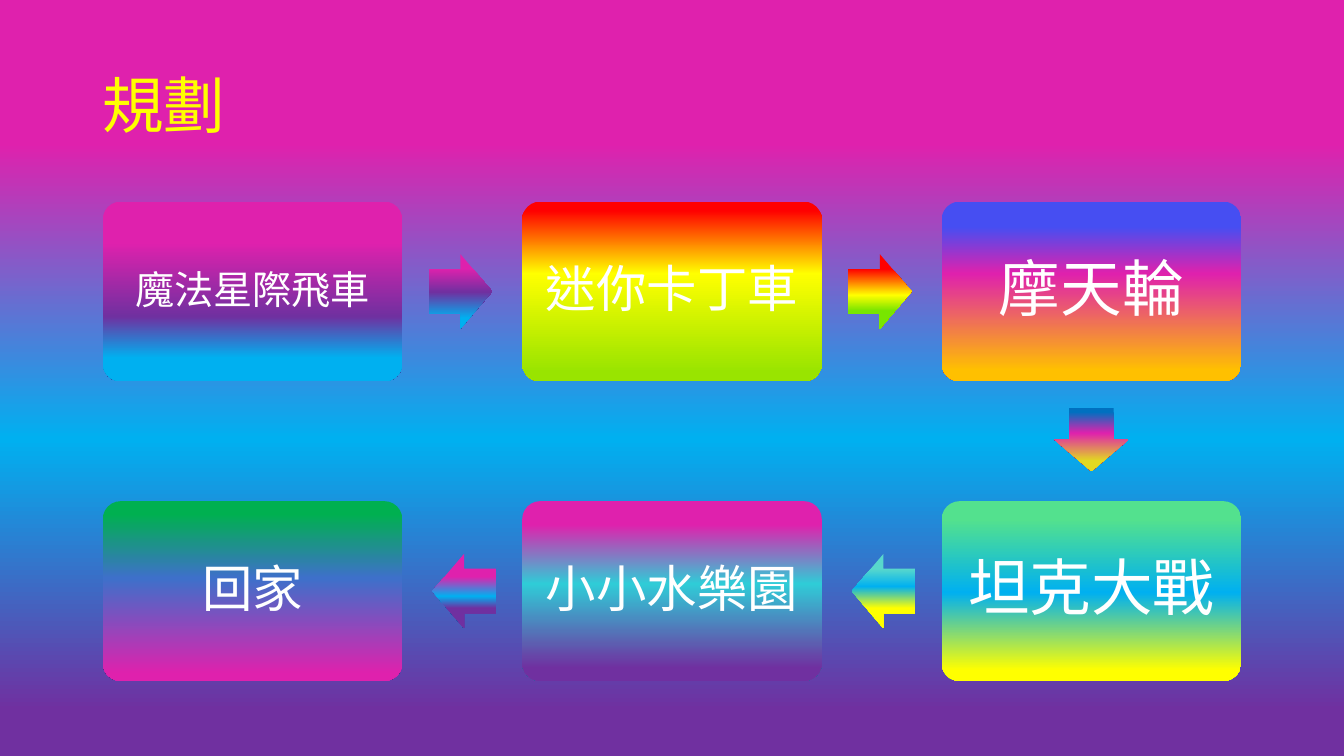
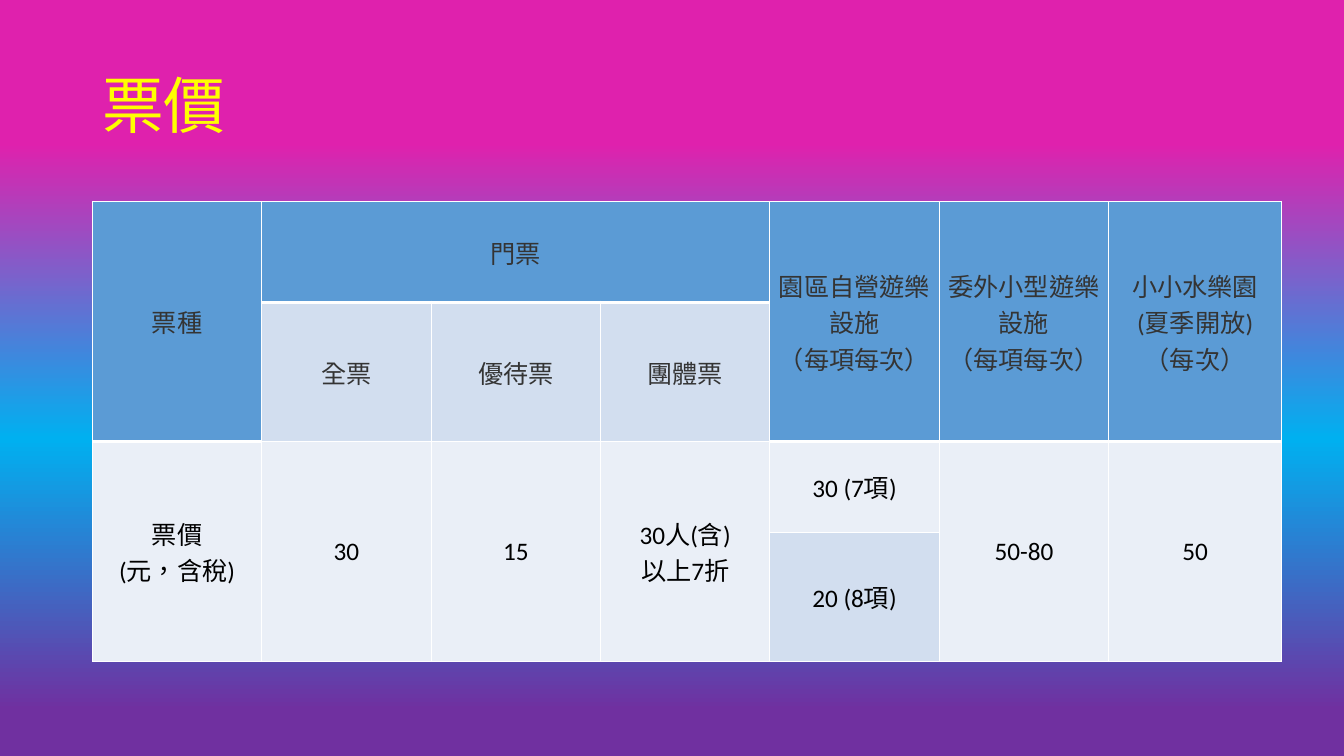
import copy

import pptx
import pptx.dml.color
import pptx.enum.lang
import pptx.enum.shapes
import pptx.enum.text
import pptx.oxml
import pptx.oxml.ns
import pptx.util

Pt = pptx.util.Pt
SHAPE = pptx.enum.shapes.MSO_SHAPE
ALIGN = pptx.enum.text.PP_ALIGN
MIDDLE = pptx.enum.text.MSO_ANCHOR.MIDDLE

CARD_W, CARD_H = 214, 128.4
CARD_LEFT, CARD_TOP = 73.4, 144
STEP_X, STEP_Y = 299.6, 214
ARROW_LENGTH, ARROW_BREADTH, ARROW_GAP = 45.4, 53.2, 18.8
ARROWS = {
    (1, 0): SHAPE.RIGHT_ARROW,
    (-1, 0): SHAPE.LEFT_ARROW,
    (0, 1): SHAPE.DOWN_ARROW,
}

RIDES = [
    ("魔法星際飛車", 28, (0, 0), [(23, "DF21AD"), (64, "7030A0"), (87, "00B0F0")]),
    ("迷你卡丁車", 36, (1, 0), [(5, "FF0000"), (40, "FFFF00"), (95, "99E400")]),
    ("摩天輪", 44, (2, 0), [(14, "464EF2"), (40, "DF21AD"), (94, "FFC000")]),
    ("坦克大戰", 44, (2, 1), [(10, "53E18E"), (51, "00B0F0"), (94, "FFFF00")]),
    ("小小水樂園", 36, (1, 1), [(13, "DF21AD"), (46, "2FCCD7"), (93, "7030A0")]),
    ("回家", 36, (0, 1), [(7, "00B050"), (43, "3E70CA"), (96, "DF21AD")]),
]
ARROW_STOPS = [
    [(19, "DF21AD"), (51, "7030A0"), (86, "00B0F0")],
    [(20, "FF0000"), (55, "FFFF00"), (76, "78E500")],
    [(7, "0070C0"), (40, "DF21AD"), (84, "E2D920")],
    [(20, "58D8CC"), (44, "00B0F0"), (73, "FFFF00")],
    [(31, "DF21AD"), (57, "00B0F0"), (73, "7030A0")],
]

COLUMN_WIDTHS = [121] * 6 + [123.6]
ROW_HEIGHTS = [72, 99.4, 64.8, 92.2]
PRICES = [
    (0, 0, 2, 1, "票種"),
    (0, 1, 1, 3, "門票"),
    (0, 4, 2, 1, "園區自營遊樂設施\n（每項每次）"),
    (0, 5, 2, 1, "委外小型遊樂設施\n（每項每次）"),
    (0, 6, 2, 1, "小小水樂園\n(夏季開放)\n（每次）"),
    (1, 1, 1, 1, "全票"),
    (1, 2, 1, 1, "優待票"),
    (1, 3, 1, 1, "團體票"),
    (2, 0, 2, 1, "票價\n(元，含稅)"),
    (2, 1, 2, 1, "30"),
    (2, 2, 2, 1, "15"),
    (2, 3, 2, 1, "30人(含)\n以上7折"),
    (2, 4, 1, 1, "30 (7項)"),
    (2, 5, 2, 1, "50-80"),
    (2, 6, 2, 1, "50"),
    (3, 4, 1, 1, "20 (8項)"),
]


def rgb(value):
    return pptx.dml.color.RGBColor.from_string(value)


class Deck:
    title_font = "Noto Sans CJK JP"
    body_font = "Calibri"
    title_color = "FFFF00"
    white = "FFFFFF"
    background = [(19, "DF21AD"), (58, "00B0F0"), (94, "7030A0")]
    row_fills = ["5B9BD5", "D2DEEF", "EAEFF7", "D2DEEF"]
    row_inks = ["343434", "343434", "000000", "000000"]

    def __init__(self):
        self.prs = pptx.Presentation()
        self.prs.slide_width, self.prs.slide_height = Pt(960), Pt(540)
        self.s = None

    def slide(self, title):
        self.s = self.prs.slides.add_slide(self.prs.slide_layouts[6])
        self.gradient(self.s.background.fill, self.s._element, self.background)
        tf = self.s.shapes.add_textbox(Pt(66), Pt(25), Pt(828), Pt(104.4)).text_frame
        tf.word_wrap = True
        tf.vertical_anchor = MIDDLE
        tf.paragraphs[0].line_spacing = 0.9
        self.text(tf, title, 44, self.title_color, ALIGN.LEFT, self.title_font)

    def gradient(self, fill, element, stops):
        fill.gradient()
        fill.gradient_angle = 270
        gs_list = element.xpath(".//a:gsLst")[0]
        while len(gs_list) < len(stops):
            gs_list.append(copy.deepcopy(gs_list[0]))
        for stop, (percent, color) in zip(fill.gradient_stops, stops):
            stop.color.rgb = rgb(color)
            stop.position = percent / 100

    def text(self, tf, text, size, color, align=ALIGN.CENTER, font=None):
        p = tf.paragraphs[0]
        p.text = text
        p.alignment = align
        for r in p.runs:
            r.font.name = font or self.body_font
            r.font.size = Pt(size)
            r.font.color.rgb = rgb(color)
            r.font.language_id = pptx.enum.lang.MSO_LANGUAGE_ID.TRADITIONAL_CHINESE
            if font:
                ea = copy.deepcopy(r._r.rPr.find(pptx.oxml.ns.qn("a:latin")))
                ea.tag = pptx.oxml.ns.qn("a:ea")
                r._r.rPr.append(ea)

    def shape(self, kind, x, y, w, h, adjustments, stops):
        sp = self.s.shapes.add_shape(kind, Pt(x), Pt(y), Pt(w), Pt(h))
        sp.shadow.inherit = False
        sp.line.fill.background()
        for i, value in enumerate(adjustments):
            sp.adjustments[i] = value
        self.gradient(sp.fill, sp._element, stops)
        return sp

    def card(self, label, size, cell, stops):
        x, y = CARD_LEFT + cell[0] * STEP_X, CARD_TOP + cell[1] * STEP_Y
        sp = self.shape(SHAPE.ROUNDED_RECTANGLE, x, y, CARD_W, CARD_H, [0.1], stops)
        tf = sp.text_frame
        tf.word_wrap = True
        tf.vertical_anchor = MIDDLE
        tf.margin_left = tf.margin_right = Pt(0.3 * size)
        tf.margin_top = tf.margin_bottom = Pt(0.3 * size)
        tf.paragraphs[0].line_spacing = 0.9
        self.text(tf, label, size, self.white)

    def arrow(self, start, end, stops):
        dx, dy = end[0] - start[0], end[1] - start[1]
        reach = ARROW_GAP + ARROW_LENGTH / 2
        cx = CARD_LEFT + start[0] * STEP_X + CARD_W / 2 + dx * (CARD_W / 2 + reach)
        cy = CARD_TOP + start[1] * STEP_Y + CARD_H / 2 + dy * (CARD_H / 2 + reach)
        w, h = (ARROW_LENGTH, ARROW_BREADTH) if dx else (ARROW_BREADTH, ARROW_LENGTH)
        self.shape(ARROWS[dx, dy], cx - w / 2, cy - h / 2, w, h, [0.6, 0.5], stops)

    def border(self, cell, side, width):
        ns = pptx.oxml.ns.nsdecls("a")
        cell._tc.get_or_add_tcPr().append(pptx.oxml.parse_xml(
            f'<a:ln{side} {ns} w="{Pt(width)}"><a:solidFill>'
            f'<a:srgbClr val="{self.white}"/></a:solidFill></a:ln{side}>'))

    def table(self, x, y, widths, heights, entries):
        table = self.s.shapes.add_table(
            len(heights), len(widths), Pt(x), Pt(y),
            Pt(sum(widths)), Pt(sum(heights))).table
        table.first_row = table.horz_banding = False
        for column, width in zip(table.columns, widths):
            column.width = Pt(width)
        for row, height in zip(table.rows, heights):
            row.height = Pt(height)
        owner = {(r, c): row
                 for row, col, rows, cols, _ in entries
                 for r in range(row, row + rows)
                 for c in range(col, col + cols)}
        for (r, c), row in owner.items():
            cell = table.cell(r, c)
            self.border(cell, "L", 1)
            self.border(cell, "R", 1)
            self.border(cell, "T", 3 if owner.get((r - 1, c)) == 0 else 1)
            self.border(cell, "B", 3 if row == 0 else 1)
            cell.fill.solid()
            cell.fill.fore_color.rgb = rgb(self.row_fills[row])
        for row, col, rows, cols, text in entries:
            cell = table.cell(row, col)
            if rows * cols > 1:
                cell.merge(table.cell(row + rows - 1, col + cols - 1))
            cell.vertical_anchor = MIDDLE
            cell.margin_left = cell.margin_right = Pt(2)
            cell.margin_top = cell.margin_bottom = Pt(2)
            self.text(cell.text_frame, text, 18, self.row_inks[row])


def main():
    deck = Deck()
    deck.slide("規劃")
    for ride in RIDES:
        deck.card(*ride)
    for ride, following, stops in zip(RIDES, RIDES[1:], ARROW_STOPS):
        deck.arrow(ride[2], following[2], stops)
    deck.slide("票價")
    deck.table(66, 144, COLUMN_WIDTHS, ROW_HEIGHTS, PRICES)
    deck.prs.save("out.pptx")


if __name__ == "__main__":
    main()
